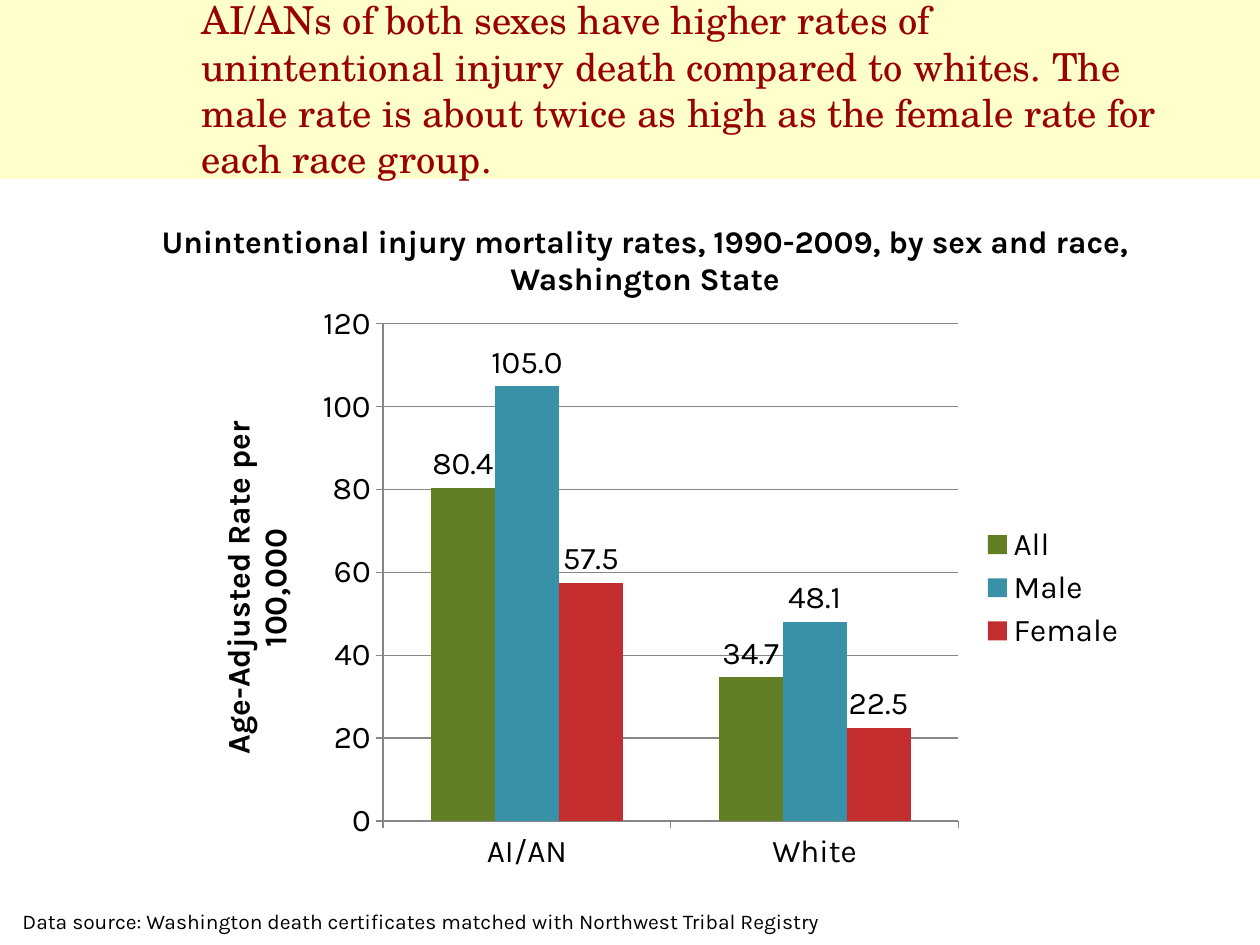
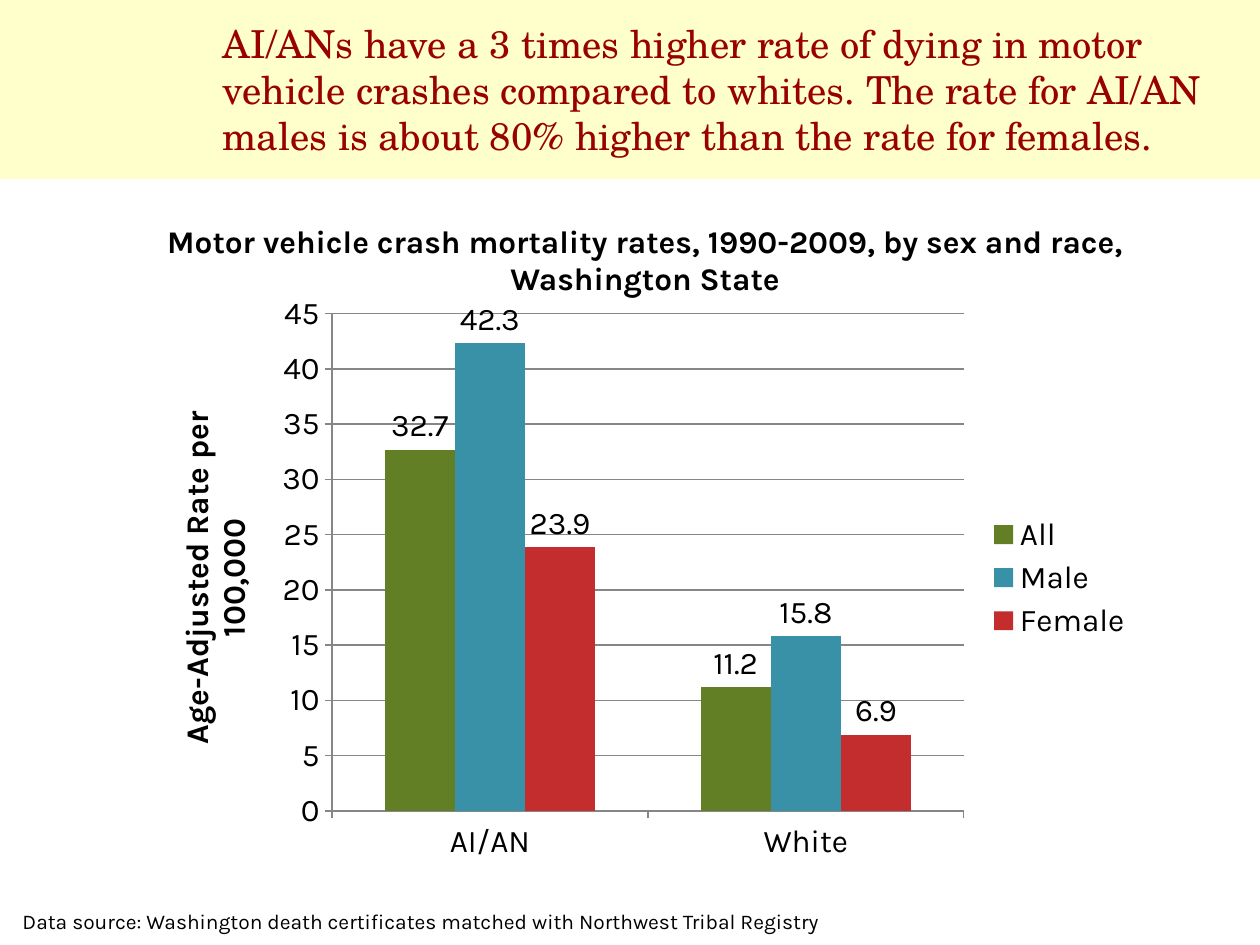
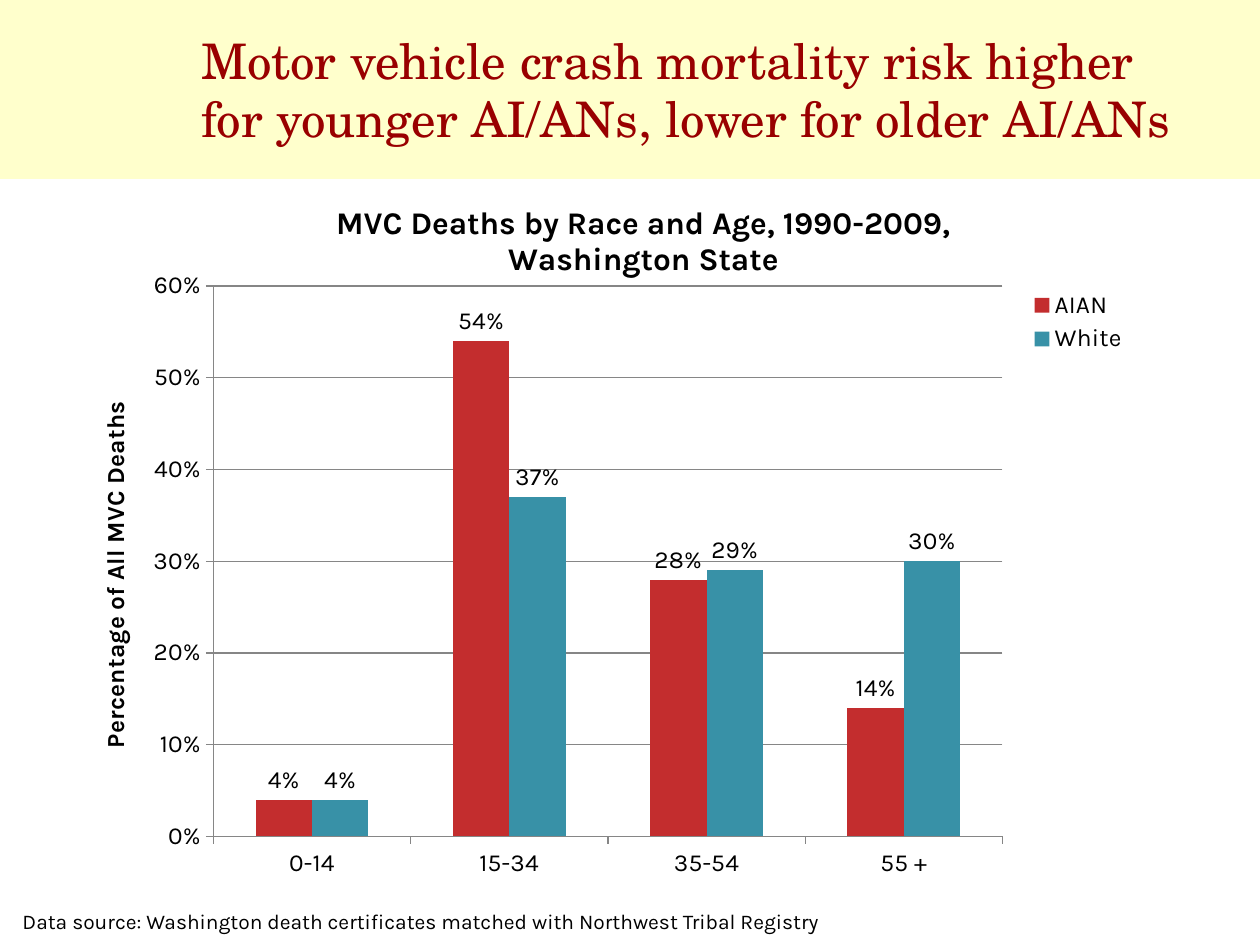
"""Build three slides on injury mortality rates in Washington State."""
from lxml.etree import SubElement
from pptx import Presentation
from pptx.chart.data import CategoryChartData
from pptx.dml.color import RGBColor
from pptx.enum.chart import XL_CHART_TYPE, XL_LABEL_POSITION, XL_LEGEND_POSITION, XL_TICK_MARK
from pptx.enum.shapes import MSO_SHAPE
from pptx.enum.text import MSO_ANCHOR, MSO_AUTO_SIZE, PP_ALIGN
from pptx.oxml import parse_xml
from pptx.oxml.ns import nsdecls, qn
from pptx.util import Inches, Pt

BODY_FONT = "Karla"
TITLE_FONT = "TeX Gyre Schola"
BLACK, MAROON, CREAM, GRAY = "000000", "990000", "FFFFCC", "868686"
GREEN, TEAL, RED = "637F26", "3891A7", "C32D2E"
SOURCE = "Data source: Washington death certificates matched with Northwest Tribal Registry"
RATE_AXIS = "Age-Adjusted Rate per 100,000"

SLIDES = [
    {
        "title": "AI/ANs of both sexes have higher rates of unintentional injury death compared to "
                 "whites. The male rate is about twice as high as the female rate for each race group.",
        "title_left": 1.5, "title_size": 22,
        "heading": "Unintentional injury mortality rates, 1990-2009, by sex and race, Washington State",
        "place": (1.5, 2.33, 7.54, 4.67), "axis_title": RATE_AXIS, "size": 18,
        "top": 120, "step": 20, "axis_format": "General", "label_format": "#,##0.0",
        "categories": ["AI/AN", "White"],
        "series": [("All", (80.4, 34.7), GREEN), ("Male", (105, 48.1), TEAL),
                   ("Female", (57.5, 22.5), RED)],
    },
    {
        "title": "AI/ANs have a 3 times higher rate of dying in motor vehicle crashes compared to "
                 "whites. The rate for AI/AN males is about 80% higher than the rate for females.",
        "title_left": 1.67, "title_size": 22,
        "heading": "Motor vehicle crash mortality rates, 1990-2009, by sex and race, Washington State",
        "place": (1.17, 2.25, 7.92, 4.67), "axis_title": RATE_AXIS, "size": 18,
        "top": 45, "step": 5, "axis_format": "General", "label_format": "#,##0.0",
        "categories": ["AI/AN", "White"],
        "series": [("All", (32.7, 11.2), GREEN), ("Male", (42.3, 15.8), TEAL),
                   ("Female", (23.9, 6.9), RED)],
    },
    {
        "title": "Motor vehicle crash mortality risk higher for younger AI/ANs, lower for older AI/ANs",
        "title_left": 1.5, "title_size": 28,
        "chart_title": "MVC Deaths by Race and Age, 1990-2009,\nWashington State",
        "place": (0.75, 1.58, 8.58, 5.75), "axis_title": "Percentage of All MVC Deaths", "size": 14,
        "top": 0.6, "step": 0.1, "axis_format": "0%", "label_format": "0%",
        "categories": ["0-14", "15-34", "35-54", "55 +"],
        "series": [("AIAN", (0.04, 0.54, 0.28, 0.14), RED),
                   ("White", (0.04, 0.37, 0.29, 0.3), TEAL)],
        "title_layout": (0.22, 0), "plot_layout": (0.11, 0.12, 0.73, 0.76),
        "legend_layout": (0.85, 0.12, 0.12, 0.1),
    },
]


def style_font(font, size, color=BLACK, name=BODY_FONT, bold=False):
    font.size, font.name, font.bold = Pt(size), name, bold
    font.color.rgb = RGBColor.from_string(color)


def set_layout(parent, index, fractions, inner=False):
    for old in parent.findall(qn("c:layout")):
        parent.remove(old)
    layout = parse_xml(f"<c:layout {nsdecls('c')}><c:manualLayout/></c:layout>")
    settings = [("layoutTarget", "inner")] if inner else []
    settings += [("xMode", "edge"), ("yMode", "edge"), *zip("xywh", fractions)]
    for tag, value in settings:
        SubElement(layout[0], qn(f"c:{tag}")).set("val", str(value))
    parent.insert(index, layout)


deck = Presentation()
deck.slide_width, deck.slide_height = Inches(10), Inches(7.5)

for content in SLIDES:
    page = deck.slides.add_slide(deck.slide_layouts[6])
    band = page.shapes.add_shape(MSO_SHAPE.RECTANGLE, 0, 0, Inches(10), Inches(1.42))
    band.shadow.inherit = False
    band.fill.solid()
    band.fill.fore_color.rgb = RGBColor.from_string(CREAM)
    band.line.fill.background()

    data = CategoryChartData()
    data.categories = content["categories"]
    for name, values, color in content["series"]:
        data.add_series(name, values)
    place = [Inches(length) for length in content["place"]]
    chart = page.shapes.add_chart(XL_CHART_TYPE.COLUMN_CLUSTERED, *place, data).chart
    size = content["size"]
    style_font(chart.font, size)

    chart.has_title = "chart_title" in content
    if chart.has_title:
        frame = chart.chart_title.text_frame
        frame.text = content["chart_title"]
        for para in frame.paragraphs:
            style_font(para.runs[0].font, 18, bold=True)
        set_layout(chart.chart_title._element, 1, content["title_layout"])

    chart.has_legend = True
    chart.legend.position = XL_LEGEND_POSITION.RIGHT
    chart.legend.include_in_layout = False
    style_font(chart.legend.font, size)
    if "plot_layout" in content:
        plot_area = chart.plots[0]._element.getparent()
        set_layout(plot_area, 0, content["plot_layout"], inner=True)
        set_layout(chart.legend._element, 1, content["legend_layout"])

    value_axis = chart.value_axis
    value_axis.minimum_scale, value_axis.maximum_scale = 0, content["top"]
    value_axis.major_unit = content["step"]
    value_axis.tick_labels.number_format = content["axis_format"]
    value_axis.tick_labels.number_format_is_linked = False
    value_axis.has_major_gridlines = True
    frame = value_axis.axis_title.text_frame
    frame.text = content["axis_title"]
    frame.word_wrap = False
    frame._txBody.bodyPr.set("rot", "-5400000")
    frame._txBody.bodyPr.set("vert", "horz")
    style_font(frame.paragraphs[0].runs[0].font, size, bold=True)
    for axis in (chart.category_axis, value_axis):
        axis.major_tick_mark = XL_TICK_MARK.OUTSIDE
        style_font(axis.tick_labels.font, size)
    for part in (chart.category_axis, value_axis, value_axis.major_gridlines):
        part.format.line.width = Pt(0.75)
        part.format.line.color.rgb = RGBColor.from_string(GRAY)

    plot = chart.plots[0]
    plot.gap_width, plot.overlap, plot.vary_by_categories = 150, 0, False
    for series, (name, values, color) in zip(plot.series, content["series"]):
        series.format.fill.solid()
        series.format.fill.fore_color.rgb = RGBColor.from_string(color)
        labels = series.data_labels
        labels.show_value = True
        labels.position = XL_LABEL_POSITION.OUTSIDE_END
        labels.number_format = content["label_format"]
        labels.number_format_is_linked = False
        style_font(labels.font, size)

    texts = [
        (content["title"], (content["title_left"], 0.08, 8, 1.25),
         content["title_size"], MAROON, TITLE_FONT, False),
        (SOURCE, (0.08, 7.16, 8.08, 0.3), 12, BLACK, BODY_FONT, False),
    ]
    if "heading" in content:
        texts.append((content["heading"], (1.08, 1.71, 8.08, 0.71), 18, BLACK, BODY_FONT, True))
    for text, spot, text_size, color, font_name, is_heading in texts:
        box = page.shapes.add_textbox(*[Inches(length) for length in spot])
        frame = box.text_frame
        frame.word_wrap = True
        frame.text = text
        para = frame.paragraphs[0]
        style_font(para.runs[0].font, text_size, color, font_name, is_heading)
        para.alignment = PP_ALIGN.CENTER if is_heading else PP_ALIGN.LEFT
        if font_name == TITLE_FONT:
            frame.vertical_anchor = MSO_ANCHOR.MIDDLE
        else:
            frame.auto_size = MSO_AUTO_SIZE.SHAPE_TO_FIT_TEXT

deck.save("out.pptx")
